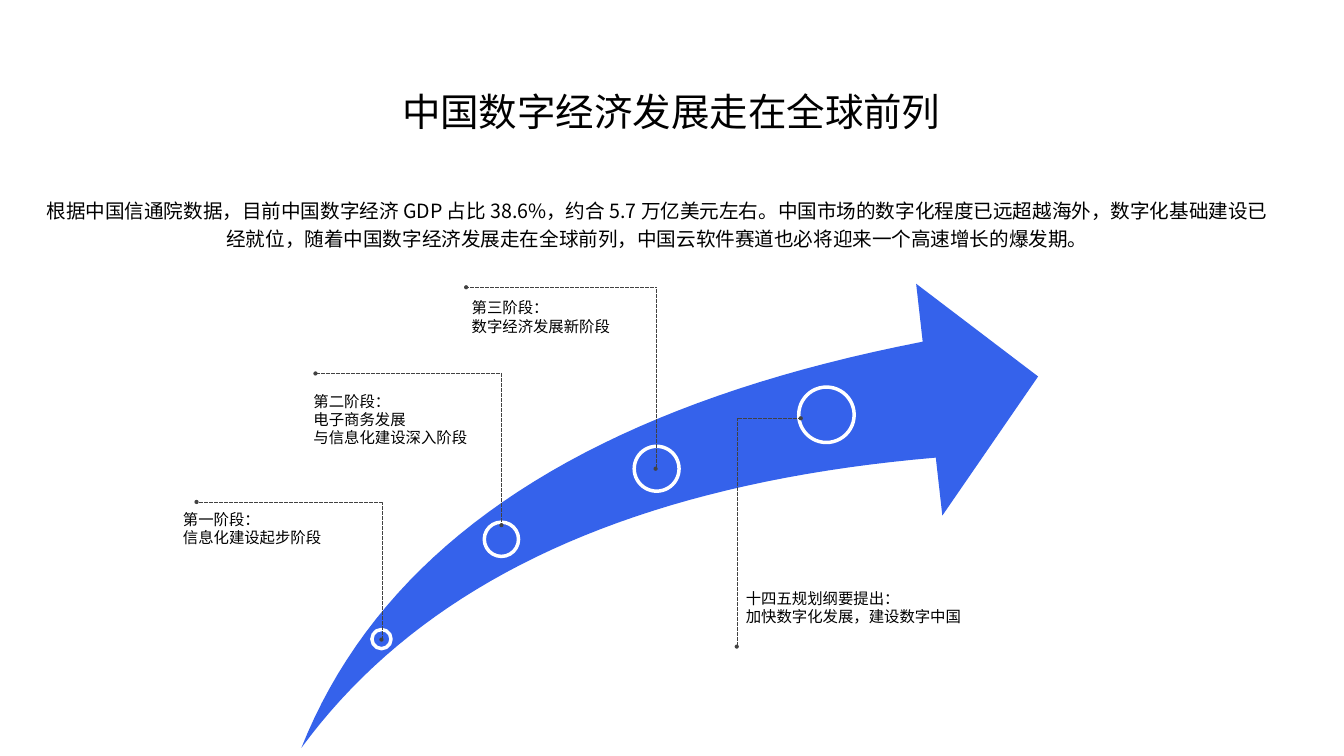
import pptx
import pptx.util
import pptx.dml.color
import pptx.enum.dml
import pptx.enum.shapes
import pptx.enum.text
import pptx.oxml.ns
import lxml.etree

# Content; all places are in inches
WIDE, HIGH = 26.67, 15
TITLE = "中国数字经济发展走在全球前列"
BODY = ("根据中国信通院数据，目前中国数字经济 GDP 占比 38.6%，约合 5.7 万亿美元左右。"
        "中国市场的数字化程度已远超越海外，数字化基础建设已经就位，"
        "随着中国数字经济发展走在全球前列，中国云软件赛道也必将迎来一个高速增长的爆发期。")

# Each stage: label lines, label box, ring centre, ring size, leader points
STAGES = [
    (["第一阶段：", "信息化建设起步阶段"], (3.5, 9.93, 3.8, 1.1),
     (7.57, 12.68), 0.38, [(7.57, 12.69), (7.59, 12.69), (7.59, 9.96), (3.9, 9.96)]),
    (["第二阶段：", "电子商务发展", "与信息化建设深入阶段"], (6.09, 7.56, 3.97, 1.52),
     (9.95, 10.7), 0.68, [(9.95, 10.42), (9.95, 7.41), (6.26, 7.41)]),
    (["第三阶段：", "数字经济发展新阶段"], (9.23, 5.74, 3.8, 1.1),
     (13.03, 9.3), 0.89, [(13.01, 9.3), (13.01, 5.7), (9.25, 5.7)]),
    (["十四五规划纲要提出：", "加快数字化发展，建设数字中国"], (14.67, 11.5, 5.2, 1.1),
     (16.4, 8.23), 1.1, [(14.62, 12.83), (14.62, 8.3), (15.89, 8.3)]),
]

# Arrow: upper edge, head, lower edge
UPPER = [(5.98, 14.84), (7.61, 10.74), (11.72, 8.06), (18.31, 6.78)]
HEAD = [(18.18, 5.63), (20.6, 7.47), (18.7, 10.23)]
LOWER = [(18.57, 9.08), (12.61, 9.59), (8.42, 11.51), (5.98, 14.84)]
STEPS = 40

BLUE = pptx.dml.color.RGBColor(0x35, 0x62, 0xEB)
WHITE = pptx.dml.color.RGBColor(0xFF, 0xFF, 0xFF)
GREY = pptx.dml.color.RGBColor(0x42, 0x42, 0x42)
BLACK = pptx.dml.color.RGBColor(0, 0, 0)
SANS, BASE = "Noto Sans CJK SC", "Noto Sans CJK JP"

inch, pt = pptx.util.Inches, pptx.util.Pt
qn = pptx.oxml.ns.qn
ALIGN = pptx.enum.text.PP_ALIGN

deck = pptx.Presentation()
deck.slide_width, deck.slide_height = inch(WIDE), inch(HIGH)
slide = deck.slides.add_slide(deck.slide_layouts[6])
shapes = slide.shapes


def apply(item, **values):
    for name, value in values.items():
        setattr(item, name, value)


def write(lines, box, size, face, pad=0.1, low=None, wrap=True, **form):
    frame = shapes.add_textbox(*map(inch, box)).text_frame
    apply(frame, word_wrap=wrap,
          vertical_anchor=pptx.enum.text.MSO_ANCHOR.MIDDLE,
          margin_left=inch(pad), margin_right=inch(pad),
          margin_top=inch(pad), margin_bottom=inch(low or pad))
    for i, line in enumerate(lines):
        para = frame.paragraphs[0] if i == 0 else frame.add_paragraph()
        apply(para, **form)
        run = para.add_run()
        run.text = line
        apply(run.font, size=pt(size), name=face)
        run.font.color.rgb = BLACK
        east = lxml.etree.SubElement(run.font._element, qn("a:ea"))
        east.set("typeface", face)


def curve(a, b, c, d):
    """Points along a cubic curve."""
    for i in range(STEPS + 1):
        t = i / STEPS
        u = 1 - t
        yield tuple(u**3 * p + 3 * u * u * t * q + 3 * u * t * t * r + t**3 * s
                    for p, q, r, s in zip(a, b, c, d))


def trace(dots, close):
    dots = [(inch(x), inch(y)) for x, y in dots]
    pen = shapes.build_freeform(*dots[0])
    pen.add_line_segments(dots[1:], close=close)
    shape = pen.convert_to_shape()
    shape.shadow.inherit = False
    return shape


def paint(shape, color):
    shape.fill.solid()
    shape.fill.fore_color.rgb = color


def ring(mid, size):
    x, y = (v - size / 2 for v in mid)
    shape = shapes.add_shape(pptx.enum.shapes.MSO_SHAPE.OVAL,
                             *map(inch, (x, y, size, size)))
    shape.shadow.inherit = False
    paint(shape, BLUE)
    shape.line.color.rgb = WHITE
    shape.line.width = pt(5)


def leader(dots):
    shape = trace(dots, False)
    shape.fill.background()
    shape.line.color.rgb = GREY
    apply(shape.line, width=pt(0.25), dash_style=pptx.enum.dml.MSO_LINE.DASH)
    for end in ("a:headEnd", "a:tailEnd"):
        lxml.etree.SubElement(shape.line._ln, qn(end)).set("type", "oval")


# Title and summary
write([TITLE], (7.88, 1.56, 10.91, 1.27), 55, SANS, wrap=False)
write([BODY], (0.78, 3.26, 24.51, 3.42), 28, BASE, low=1.22,
      alignment=ALIGN.CENTER, line_spacing=1.2)

# Growth arrow
arrow = trace([*curve(*UPPER), *HEAD, *curve(*LOWER)], True)
paint(arrow, BLUE)
arrow.line.fill.background()

# Rings first, then leaders and labels over them
for _, _, mid, size, _ in STAGES:
    ring(mid, size)
for lines, box, _, _, dots in STAGES:
    leader(dots)
    write(lines, box, 22, BASE, pad=0.13)

deck.save("out.pptx")
